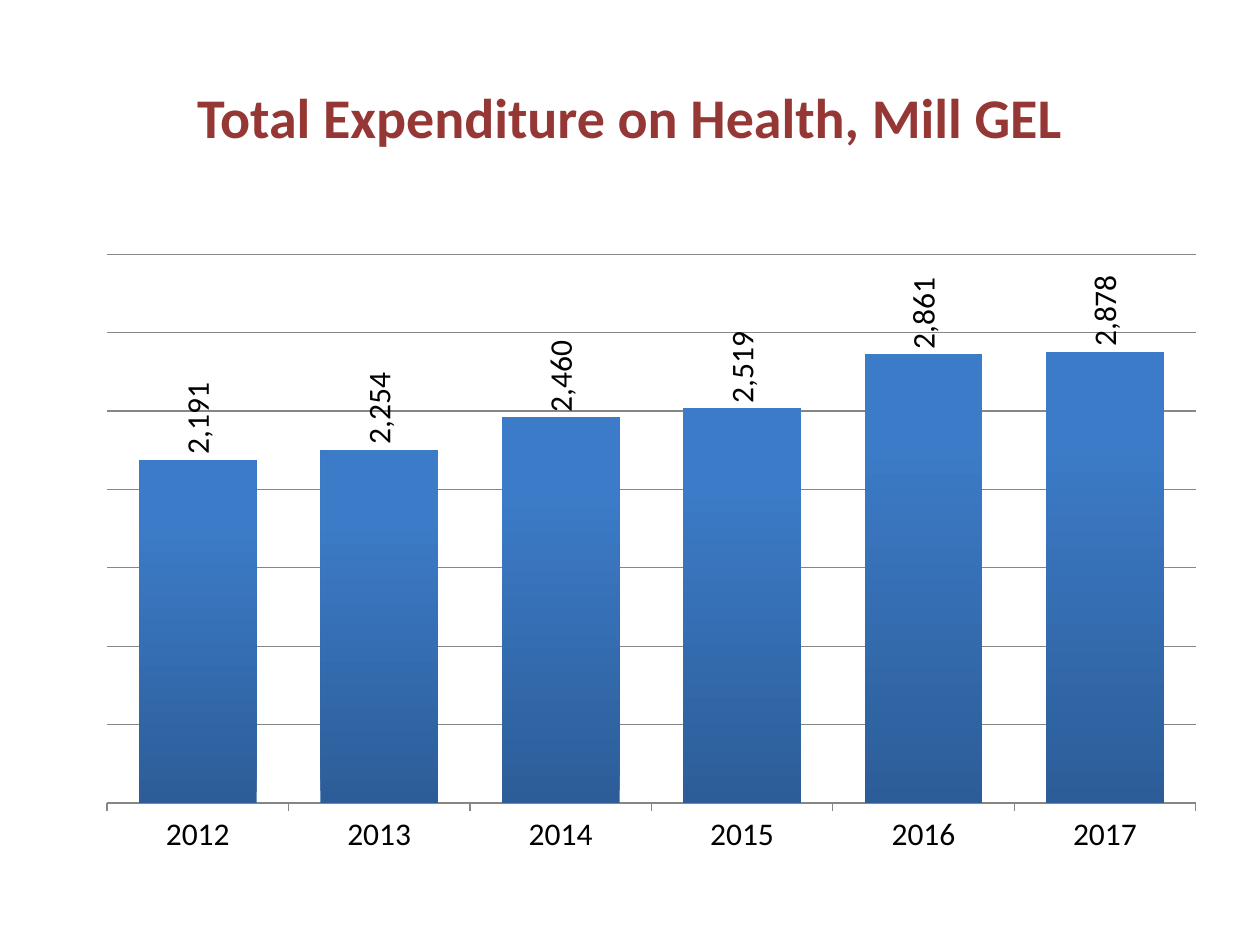
from lxml import etree
from pptx import Presentation
from pptx.chart.data import CategoryChartData
from pptx.dml.color import RGBColor
from pptx.enum import chart as ch, text as tx
from pptx.oxml.ns import qn
from pptx.util import Inches, Pt

RED = RGBColor(0x95, 0x37, 0x35)
BLACK = RGBColor(0, 0, 0)
GRAY = RGBColor(0x86, 0x86, 0x86)
DARK = RGBColor(0x2C, 0x5D, 0x98)
BLUE = RGBColor(0x3C, 0x7B, 0xC7)
FONT = "Calibri"

SPEND = {"2012": 2191, "2013": 2254, "2014": 2460,
         "2015": 2519, "2016": 2861, "2017": 2878}


def style(font, size, color, bold=False):
    font.name, font.size, font.bold = FONT, Pt(size), bold
    font.color.rgb = color


def add_text(slide, words, box, size, color, bold=False):
    frame = slide.shapes.add_textbox(*map(Inches, box)).text_frame
    frame.word_wrap = True
    frame.vertical_anchor = tx.MSO_ANCHOR.MIDDLE
    para = frame.paragraphs[0]
    para.alignment = tx.PP_ALIGN.CENTER
    run = para.add_run()
    run.text = words
    style(run.font, size, color, bold)


prs = Presentation()
prs.slide_width, prs.slide_height = Inches(10), Inches(7.5)
slide = prs.slides.add_slide(prs.slide_layouts[6])

add_text(slide, "Total Expenditure on Health, Mill GEL",
         (0.5, 0.3, 9, 1.25), size=32, color=RED, bold=True)

# Column chart
data = CategoryChartData(number_format="#,##0")
data.categories = list(SPEND)
data.add_series("Series 1", list(SPEND.values()))
chart = slide.shapes.add_chart(
    ch.XL_CHART_TYPE.COLUMN_CLUSTERED,
    *map(Inches, (0.67, 1.92, 9, 4.95)), data).chart
chart.has_legend = False
chart.has_title = False
style(chart.font, 18, BLACK)

# Axes
years = chart.category_axis
years.major_tick_mark = ch.XL_TICK_MARK.OUTSIDE
years.format.line.color.rgb = GRAY
money = chart.value_axis
money.minimum_scale, money.maximum_scale, money.major_unit = 0, 3500, 500
money.has_major_gridlines = True
money.major_gridlines.format.line.color.rgb = GRAY
money.visible = False

# Bars shade from dark at the foot to blue
plot = chart.plots[0]
plot.gap_width = 54
plot.vary_by_categories = False
fill = plot.series[0].format.fill
fill.gradient()
fill.gradient_angle = 90
for stop, (color, place) in zip(fill.gradient_stops, ((DARK, 0), (BLUE, 0.8))):
    stop.color.rgb = color
    stop.position = place

# Upright value labels above the bars
plot.has_data_labels = True
labels = plot.data_labels
labels.show_value = True
labels.number_format, labels.number_format_is_linked = "#,##0", False
labels.position = ch.XL_LABEL_POSITION.OUTSIDE_END
style(labels.font, 18, BLACK)
body = labels._element.find(".//" + qn("a:bodyPr"))
body.set("rot", "-5400000")
body.set("vert", "horz")

# Fixed inner plot area, as fractions of the chart
area = chart._chartSpace.chart.plotArea
for old in area.findall(qn("c:layout")):
    area.remove(old)
layout = etree.Element(qn("c:layout"))
area.insert(0, layout)
manual = etree.SubElement(layout, qn("c:manualLayout"))
for tag, value in (("layoutTarget", "inner"), ("xMode", "edge"),
                   ("yMode", "edge"), ("x", 0.02), ("y", 0.02),
                   ("w", 0.96), ("h", 0.88)):
    etree.SubElement(manual, qn("c:" + tag)).set("val", str(value))

prs.save("out.pptx")
